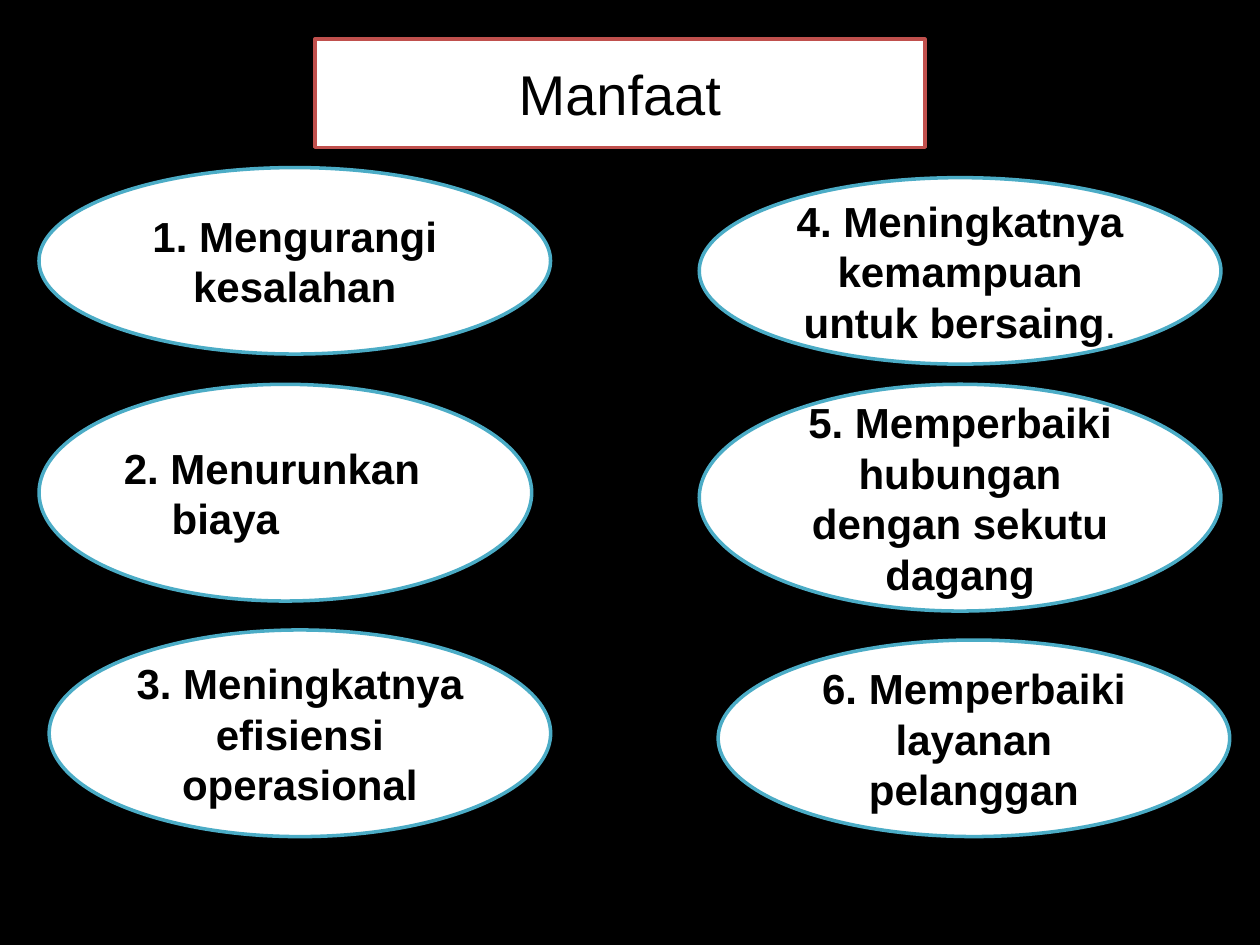
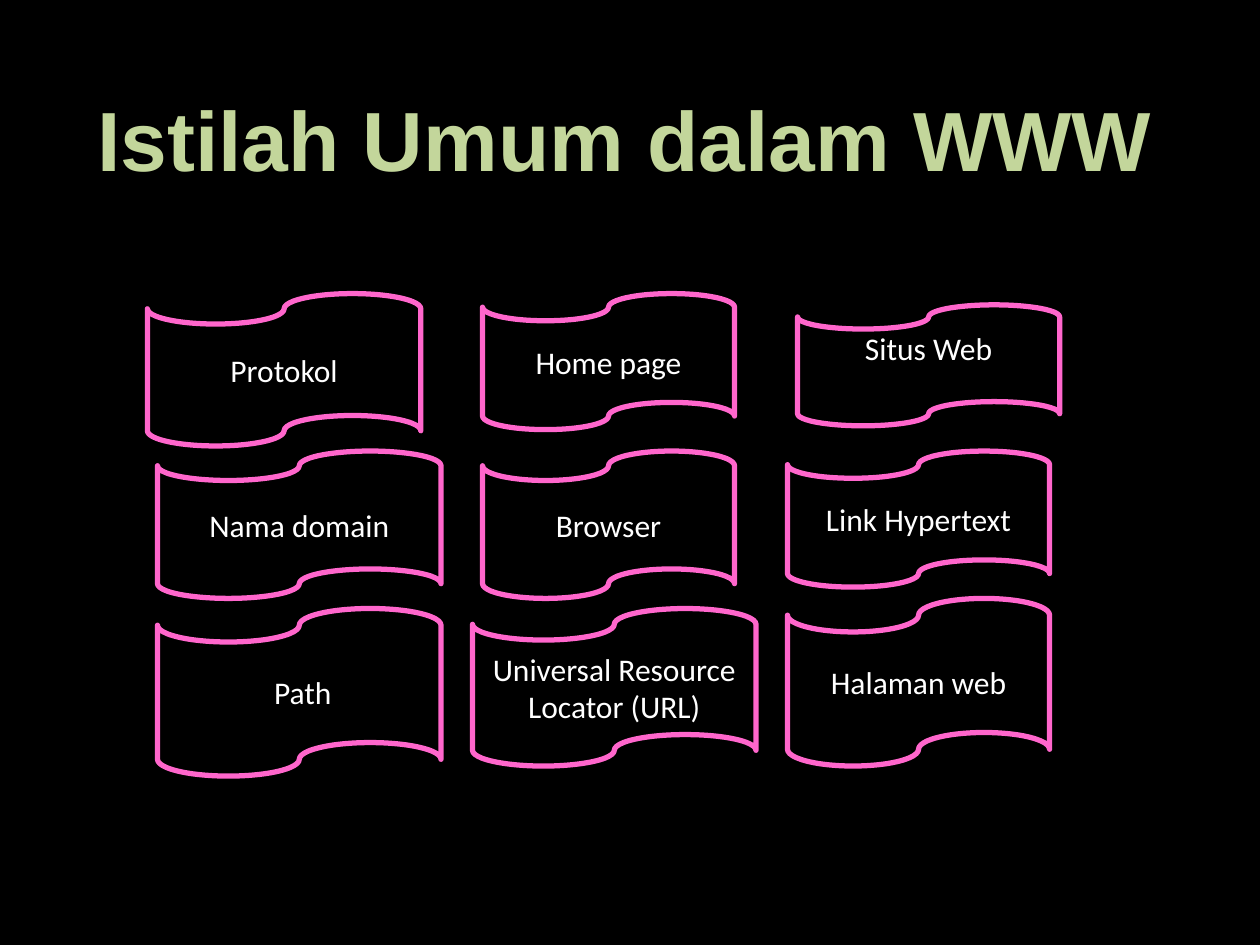
from pptx import Presentation
from pptx.dml.color import RGBColor
from pptx.enum.shapes import MSO_SHAPE
from pptx.enum.text import MSO_ANCHOR, MSO_AUTO_SIZE, PP_ALIGN
from pptx.oxml.xmlchemy import OxmlElement
from pptx.util import Inches, Pt

COLORS = {
    "black": "000000",
    "white": "FFFFFF",
    "red": "C0504D",
    "aqua": "4BACC6",
    "pink": "FF66CC",
    "green": "C3D69B",
}
TITLE_AND_CONTENT, TITLE_ONLY = 1, 5

BENEFITS = [
    ("1. Mengurangi kesalahan", (0.31, 1.33, 4.06, 1.48)),
    ("3. Meningkatnya efisiensi operasional", (0.39, 5, 3.98, 1.64)),
    ("4. Meningkatnya kemampuan untuk bersaing", (5.55, 1.41, 4.14, 1.48)),
    ("5. Memperbaiki hubungan dengan sekutu dagang", (5.55, 3.05, 4.14, 1.8)),
    ("6. Memperbaiki layanan pelanggan", (5.7, 5.08, 4.06, 1.56)),
]
TERMS = [
    ("Protokol", (1.17, 2.33, 2.17, 1.21)),
    ("Nama domain", (1.25, 3.58, 2.25, 1.17)),
    (" Path", (1.25, 4.83, 2.25, 1.33)),
    ("Home page", (3.83, 2.33, 2, 1.08)),
    ("Browser", (3.83, 3.58, 2, 1.17)),
    ("Universal Resource Locator (URL)", (3.75, 4.83, 2.25, 1.25)),
    ("Situs Web", (6.33, 2.42, 2.08, 0.96)),
    ("Link Hypertext", (6.25, 3.58, 2.08, 1.08)),
    ("Halaman web", (6.25, 4.75, 2.08, 1.33)),
]
BENEFIT_TEXT = dict(size=24, bold=True)
TERM_TEXT = dict(size=18, font="Calibri", color="white")


def rgb(name):
    return RGBColor.from_string(COLORS[name])


def add_run(p, text, size=24, font="Arial", color="black", bold=False):
    r = p.add_run()
    r.text = text
    r.font.size = Pt(size)
    r.font.name = font
    r.font.bold = bold
    r.font.color.rgb = rgb(color)


def write(sp, text, align=PP_ALIGN.CENTER, anchor=MSO_ANCHOR.MIDDLE, **style):
    """Set the text of a shape and return its paragraph."""
    tf = sp.text_frame
    tf.word_wrap = True
    tf.auto_size = MSO_AUTO_SIZE.NONE
    tf.vertical_anchor = anchor
    p = tf.paragraphs[0]
    p.alignment = align
    add_run(p, text, **style)
    return p


def place(sp, box):
    sp.left, sp.top, sp.width, sp.height = map(Inches, box)


def paint(sp, fill, line, width):
    sp.fill.solid()
    sp.fill.fore_color.rgb = rgb(fill)
    sp.line.color.rgb = rgb(line)
    sp.line.width = Pt(width)


class Deck:
    def __init__(self):
        self.prs = Presentation()
        self.prs.slide_width, self.prs.slide_height = Inches(10), Inches(7.5)
        fill = self.prs.slide_master.background.fill
        fill.solid()
        fill.fore_color.rgb = rgb("black")
        self.s = None

    def new_slide(self, layout):
        self.s = self.prs.slides.add_slide(self.prs.slide_layouts[layout])

    def title(self, text, box, **style):
        sp = self.s.shapes.title
        place(sp, box)
        write(sp, text, **style)
        return sp

    def body_ellipse(self, text, box):
        """Turn the body placeholder into an ellipse with a hanging indent."""
        sp = self.s.placeholders[1]
        place(sp, box)
        geom = OxmlElement("a:prstGeom")
        geom.set("prst", "ellipse")
        geom.append(OxmlElement("a:avLst"))
        sp.element.spPr.append(geom)
        paint(sp, "white", "aqua", 2)
        p = write(sp, text, align=PP_ALIGN.LEFT, **BENEFIT_TEXT)
        pPr = p._p.get_or_add_pPr()
        pPr.set("marL", str(Inches(0.38)))
        pPr.set("indent", str(-Inches(0.38)))
        pPr.append(OxmlElement("a:buNone"))

    def shape(self, kind, box, fill, line, width):
        sp = self.s.shapes.add_shape(kind, *map(Inches, box))
        sp.shadow.inherit = False
        paint(sp, fill, line, width)
        return sp

    def ellipse(self, text, box):
        sp = self.shape(MSO_SHAPE.OVAL, box, "white", "aqua", 2)
        return write(sp, text, **BENEFIT_TEXT)

    def tape(self, text, box, anchor=MSO_ANCHOR.MIDDLE):
        sp = self.shape(MSO_SHAPE.FLOWCHART_PUNCHED_TAPE, box, "black", "pink", 3)
        if anchor == MSO_ANCHOR.TOP:
            sp.text_frame.margin_top = 0
        write(sp, text, anchor=anchor, **TERM_TEXT)


def benefits_slide(deck):
    deck.new_slide(TITLE_AND_CONTENT)
    title = deck.title("Manfaat", (2.5, 0.31, 4.84, 0.86), size=32)
    paint(title, "white", "red", 2)
    deck.body_ellipse("2. Menurunkan biaya", (0.31, 3.05, 3.91, 1.72))
    for text, box in BENEFITS:
        p = deck.ellipse(text, box)
        if text.startswith("4."):
            add_run(p, ".")


def terms_slide(deck):
    deck.new_slide(TITLE_ONLY)
    deck.title("Istilah Umum dalam WWW ", (0.55, 0.47, 9, 1.25),
               size=48, color="green", bold=True)
    for text, box in TERMS:
        anchor = MSO_ANCHOR.TOP if text == "Situs Web" else MSO_ANCHOR.MIDDLE
        deck.tape(text, box, anchor)


def main():
    deck = Deck()
    benefits_slide(deck)
    terms_slide(deck)
    deck.prs.save("out.pptx")


if __name__ == "__main__":
    main()
